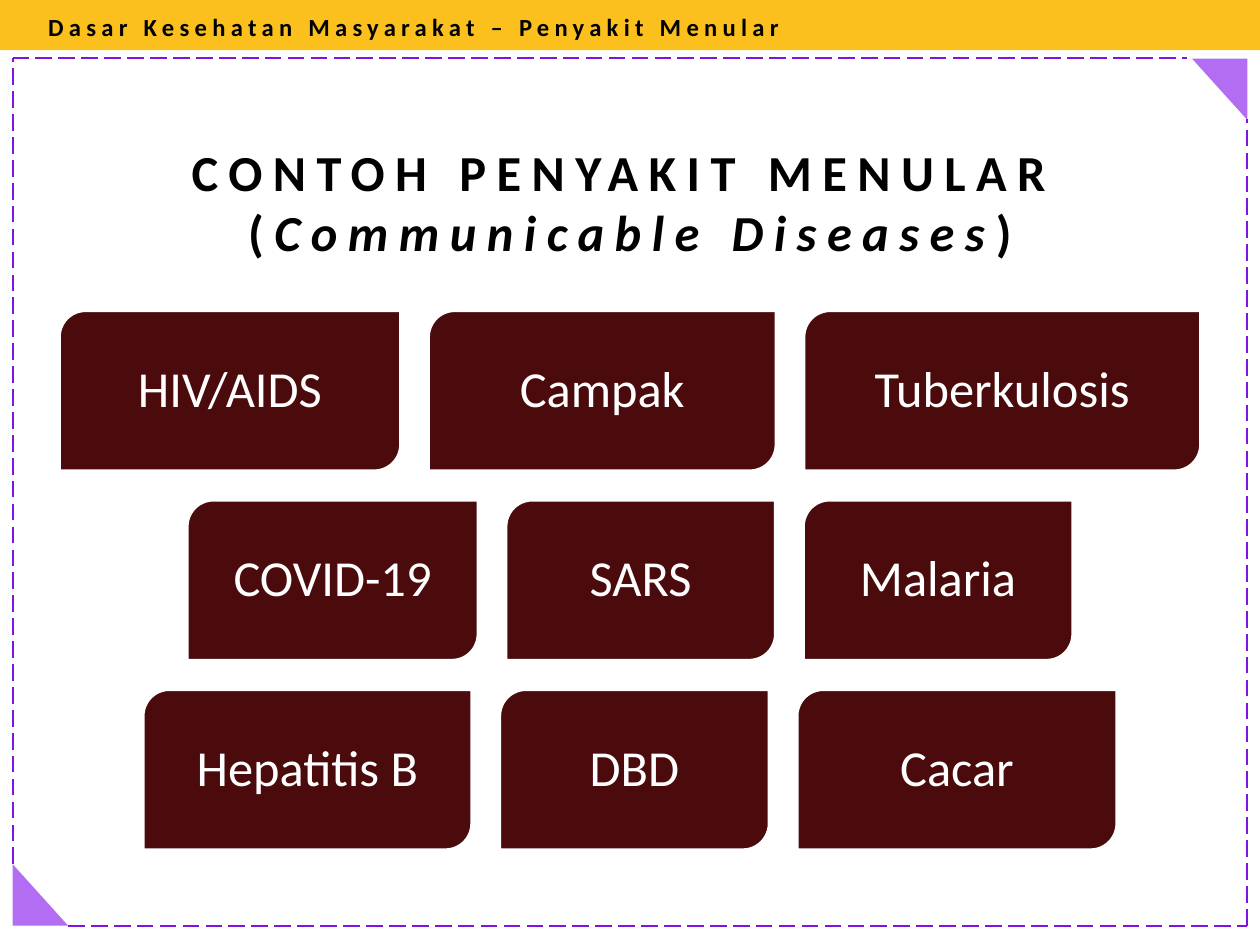
from dataclasses import dataclass

from lxml.etree import SubElement
from pptx import Presentation
from pptx.dml.color import RGBColor
from pptx.enum.dml import MSO_LINE
from pptx.enum.shapes import MSO_CONNECTOR, MSO_SHAPE
from pptx.enum.text import MSO_ANCHOR, PP_ALIGN
from pptx.oxml.ns import qn
from pptx.util import Inches, Pt

FONT = "Calibri"
BLACK, WHITE = "000000", "FFFFFF"
YELLOW, MAROON = "FBC01E", "4B0B0C"
LILAC, PURPLE = "B26DF3", "7E13E3"

prs = Presentation()
prs.slide_width, prs.slide_height = Inches(8.33), Inches(6.25)
slide = prs.slides.add_slide(prs.slide_layouts[5])


@dataclass
class Disease:
    name: str
    width: float


@dataclass
class Corner:
    left: float
    top: float
    rotation: int


@dataclass
class Edge:
    x1: float
    y1: float
    x2: float
    y2: float


# All positions are percentages of the slide's width and height
def x(share: float) -> int:
    return round(prs.slide_width * share / 100)


def y(share: float) -> int:
    return round(prs.slide_height * share / 100)


def color(value: str) -> RGBColor:
    return RGBColor.from_string(value)


def add_text(p, text: str, *, size: float, fill: str = BLACK, bold: bool = False,
             italic: bool = False, spacing: float = 0) -> None:
    r = p.add_run()
    r.text = text
    r.font.name, r.font.size = FONT, Pt(size)
    r.font.bold, r.font.italic = bold, italic
    r.font.color.rgb = color(fill)
    if spacing:
        r.font._element.set("spc", str(round(spacing * 100)))


def add_block(kind: MSO_SHAPE, left: float, top: float, width: float, height: float,
              fill: str, line: str | None = None):
    sp = slide.shapes.add_shape(kind, x(left), y(top), x(width), y(height))
    sp.shadow.inherit = False
    sp.fill.solid()
    sp.fill.fore_color.rgb = color(fill)
    if line:
        sp.line.color.rgb = color(line)
        sp.line.width = Pt(2.08)
    else:
        sp.line.fill.background()
    return sp


def add_disease(disease: Disease, left: float, top: float) -> None:
    sp = add_block(MSO_SHAPE.ROUND_2_DIAG_RECTANGLE, left, top,
                   disease.width, CARD_HEIGHT, MAROON, WHITE)
    tf = sp.text_frame
    tf.vertical_anchor = MSO_ANCHOR.MIDDLE
    p = tf.paragraphs[0]
    p.alignment, p.line_spacing = PP_ALIGN.CENTER, 0.9
    add_text(p, disease.name, size=24, fill=WHITE)


def add_edge(edge: Edge) -> None:
    line = slide.shapes.add_connector(MSO_CONNECTOR.STRAIGHT, x(edge.x1), y(edge.y1),
                                      x(edge.x2), y(edge.y2))
    line.line.color.rgb = color(PURPLE)
    line.line.width = Pt(1)
    line.line.dash_style = MSO_LINE.LONG_DASH
    SubElement(line._element.spPr, qn("a:effectLst"))


# Header bar
add_block(MSO_SHAPE.RECTANGLE, 0, 0, 100, 5.3, YELLOW)
header = slide.shapes.add_textbox(x(2.64), y(0.48), x(61.5), y(4.8))
header.text_frame.word_wrap = False
add_text(header.text_frame.paragraphs[0], "Dasar Kesehatan Masyarakat – Penyakit Menular",
         size=11.7, bold=True, spacing=2.5)

# Title
title = slide.shapes.title
title.left, title.top, title.width, title.height = x(11.64), y(14.1), x(76.7), y(14.5)
tf = title.text_frame
tf.word_wrap = True
tf.vertical_anchor = MSO_ANCHOR.TOP
title_lines = [
    [("CONTOH PENYAKIT MENULAR ", False)],
    [("(", False), ("Communicable Diseases", True), (")", False)],
]
for i, runs in enumerate(title_lines):
    p = tf.add_paragraph() if i else tf.paragraphs[0]
    p.alignment = PP_ALIGN.CENTER
    for text, italic in runs:
        add_text(p, text, size=24, bold=True, italic=italic, spacing=5)

# Disease cards, each row centred on the slide
CARD_TOP, CARD_HEIGHT, ROW_PITCH, GAP = 32.8, 17.1, 20.05, 2.1
rows = [
    [Disease("HIV/AIDS", 27.2), Disease("Campak", 27.7), Disease("Tuberkulosis", 31.6)],
    [Disease("COVID-19", 23.2), Disease("SARS", 21.5), Disease("Malaria", 21.5)],
    [Disease("Hepatitis B", 26.2), Disease("DBD", 21.5), Disease("Cacar", 25.5)],
]
for i, row in enumerate(rows):
    row_width = sum(d.width for d in row) + GAP * (len(row) - 1)
    left = (100 - row_width) / 2
    for disease in row:
        add_disease(disease, left, CARD_TOP + i * ROW_PITCH)
        left += disease.width + GAP

# Dashed frame with two corner triangles
LEFT, RIGHT, TOP, BOTTOM = 1, 99, 6.1, 97.95
CORNER_W, CORNER_H = 4.4, 6.5
corners = [
    Corner(LEFT, BOTTOM - CORNER_H, 0),
    Corner(RIGHT - CORNER_W, TOP + 0.1, 180),
]
for corner in corners:
    triangle = add_block(MSO_SHAPE.RIGHT_TRIANGLE, corner.left, corner.top,
                         CORNER_W, CORNER_H, LILAC)
    triangle.rotation = corner.rotation

edges = [
    Edge(LEFT, BOTTOM - CORNER_H, LEFT, TOP),
    Edge(LEFT + CORNER_W, BOTTOM, RIGHT, BOTTOM),
    Edge(RIGHT, BOTTOM, RIGHT, TOP + CORNER_H),
    Edge(LEFT, TOP, RIGHT - CORNER_W - 0.4, TOP),
]
for edge in edges:
    add_edge(edge)

prs.save("out.pptx")
